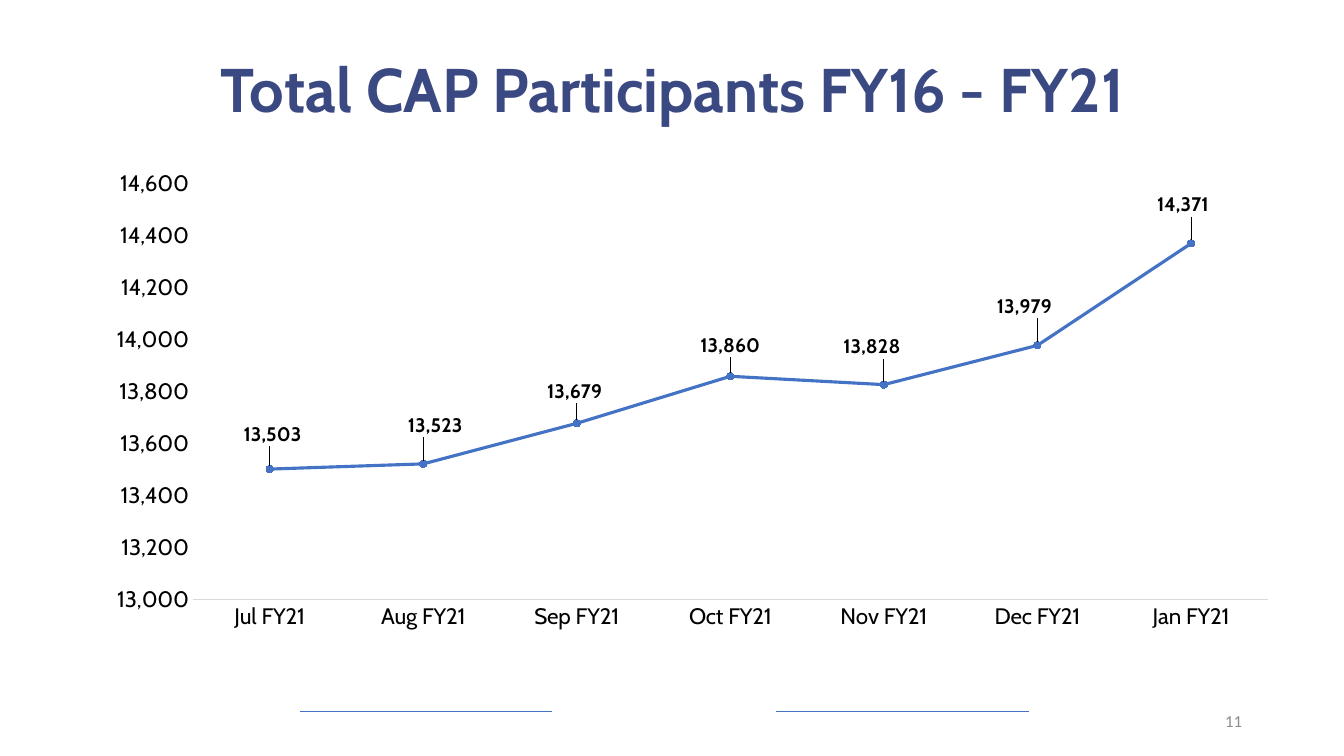
from lxml import etree
from pptx import Presentation
from pptx.chart.data import CategoryChartData as ChartData
from pptx.dml.color import RGBColor as RGB
from pptx.enum.chart import XL_CHART_TYPE as CHART, XL_LABEL_POSITION as POS
from pptx.enum.chart import XL_MARKER_STYLE as MARKER, XL_TICK_MARK as TICK
from pptx.enum.shapes import MSO_CONNECTOR as CONN
from pptx.enum.text import MSO_ANCHOR as ANCHOR, PP_ALIGN as ALIGN
from pptx.oxml import parse_xml
from pptx.oxml.ns import nsdecls, qn
from pptx.util import Emu, Pt

# Content
TITLE = "Total CAP Participants FY16 - FY21"
PAGE = "11"
MONTHS = ["Jul", "Aug", "Sep", "Oct", "Nov", "Dec", "Jan"]
COUNTS = [13503, 13523, 13679, 13860, 13828, 13979, 14371]
# Label shifts from the spot above each point, in px
SHIFTS = [(3, -15), (12, -19), (-2, -12), (0, -11), (-12, -18), (-13, -19), (-8, -19)]
RULES = [(300, 552), (776, 1029)]
RULE_Y = 711
CHART_BOX = (93, 162, 1200, 478)
PLOT_BOX = (100, 22, 1075, 416)

NAVY = RGB(0x3B, 0x49, 0x82)
BLUE = RGB(0x44, 0x72, 0xC4)
GRAY = RGB(0x8C, 0x8C, 0x8C)
PALE = RGB(0xD9, 0xD9, 0xD9)
BLACK = RGB(0, 0, 0)
FONT = "Cabin"


def px(n):
    return Emu(round(n * 914400 / 100.8))


def style(font, size, color, bold=False, name=FONT):
    font.name, font.size, font.bold = name, Pt(size), bold
    font.color.rgb = color


def add_text(slide, box, text, align, *look):
    frame = slide.shapes.add_textbox(*map(px, box)).text_frame
    frame.word_wrap = True
    frame.vertical_anchor = ANCHOR.MIDDLE
    frame.text = text
    para = frame.paragraphs[0]
    para.alignment = align
    style(para.runs[0].font, *look)
    return para


def layout(x, y, w=None, h=None):
    """Manual chart layout, as shares of the chart size."""
    wide, high = CHART_BOX[2:]
    inner = w is not None
    tags = [("layoutTarget", "inner"), ("xMode", "edge"), ("yMode", "edge")] if inner else []
    tags += [("x", round(x / wide, 4)), ("y", round(y / high, 4))]
    if inner:
        tags += [("w", round(w / wide, 4)), ("h", round(h / high, 4))]
    body = "".join(f'<c:{tag} val="{val}"/>' for tag, val in tags)
    return parse_xml(f'<c:layout {nsdecls("c")}><c:manualLayout>{body}</c:manualLayout></c:layout>')


LEADERS = f"""<c:extLst {nsdecls("c", "a")}>
<c:ext uri="{{CE6537A1-D6FC-4f65-9D91-7224C49458BB}}"
 xmlns:c15="http://schemas.microsoft.com/office/drawing/2012/chart">
<c15:showLeaderLines val="1"/><c15:leaderLines><c:spPr><a:ln w="9525"><a:solidFill>
<a:srgbClr val="000000"/></a:solidFill></a:ln></c:spPr></c15:leaderLines></c:ext></c:extLst>"""

prs = Presentation()
prs.slide_width, prs.slide_height = px(1344), px(756)
slide = prs.slides.add_slide(prs.slide_layouts[6])

# Footer rules
for left, right in RULES:
    rule = slide.shapes.add_connector(CONN.STRAIGHT, px(left), px(RULE_Y), px(right), px(RULE_Y))
    rule.line.color.rgb = BLUE
    rule.line.width = Pt(0.5)
    etree.SubElement(rule.element.spPr, qn("a:effectLst"))

# Title and page number
head = add_text(slide, (93, 40, 1159, 106), TITLE, ALIGN.CENTER, 44, NAVY, True)
head.line_spacing = 0.9
add_text(slide, (950, 701, 302, 40), PAGE, ALIGN.RIGHT, 12, GRAY, False, "Calibri")

# Line chart
data = ChartData(number_format="#,##0")
data.categories = [f"{month} FY21" for month in MONTHS]
data.add_series("Series 1", COUNTS)
chart = slide.shapes.add_chart(CHART.LINE_MARKERS, *map(px, CHART_BOX), data).chart
chart.has_legend = chart.has_title = False
style(chart.font, 14, BLACK, True)
plot = chart.plots[0]
plot.vary_by_categories = False
area = chart.element.find(".//" + qn("c:plotArea"))
for old in area.findall(qn("c:layout")):
    area.remove(old)
area.insert(0, layout(*PLOT_BOX))

# Axes
months, counts = chart.category_axis, chart.value_axis
for axis in (months, counts):
    axis.major_tick_mark = axis.minor_tick_mark = TICK.NONE
    axis.has_major_gridlines = False
    style(axis.tick_labels.font, 16, BLACK)
months.format.line.color.rgb = PALE
months.format.line.width = Pt(0.75)
counts.format.line.fill.background()
counts.minimum_scale, counts.maximum_scale, counts.major_unit = 13000, 14600, 200
counts.tick_labels.number_format = "#,##0"
counts.tick_labels.number_format_is_linked = False

# Series and its labels
line = plot.series[0]
line.smooth = False
line.format.line.color.rgb = BLUE
line.format.line.width = Pt(2.25)
line.marker.style, line.marker.size = MARKER.CIRCLE, 5
line.marker.format.fill.solid()
line.marker.format.fill.fore_color.rgb = BLUE
line.marker.format.line.color.rgb = BLUE

labels = line.data_labels
labels.show_value = True
labels.position = POS.ABOVE
style(labels.font, 14, BLACK, True)
for i, shift in enumerate(SHIFTS):
    label = line.points[i].data_label
    style(label.font, 14, BLACK, True)
    label.position = POS.ABOVE
for item, shift in zip(line.data_labels._element.findall(qn("c:dLbl")), SHIFTS):
    item.insert(1, layout(*shift))
labels._element.append(parse_xml(LEADERS))

prs.save("out.pptx")
